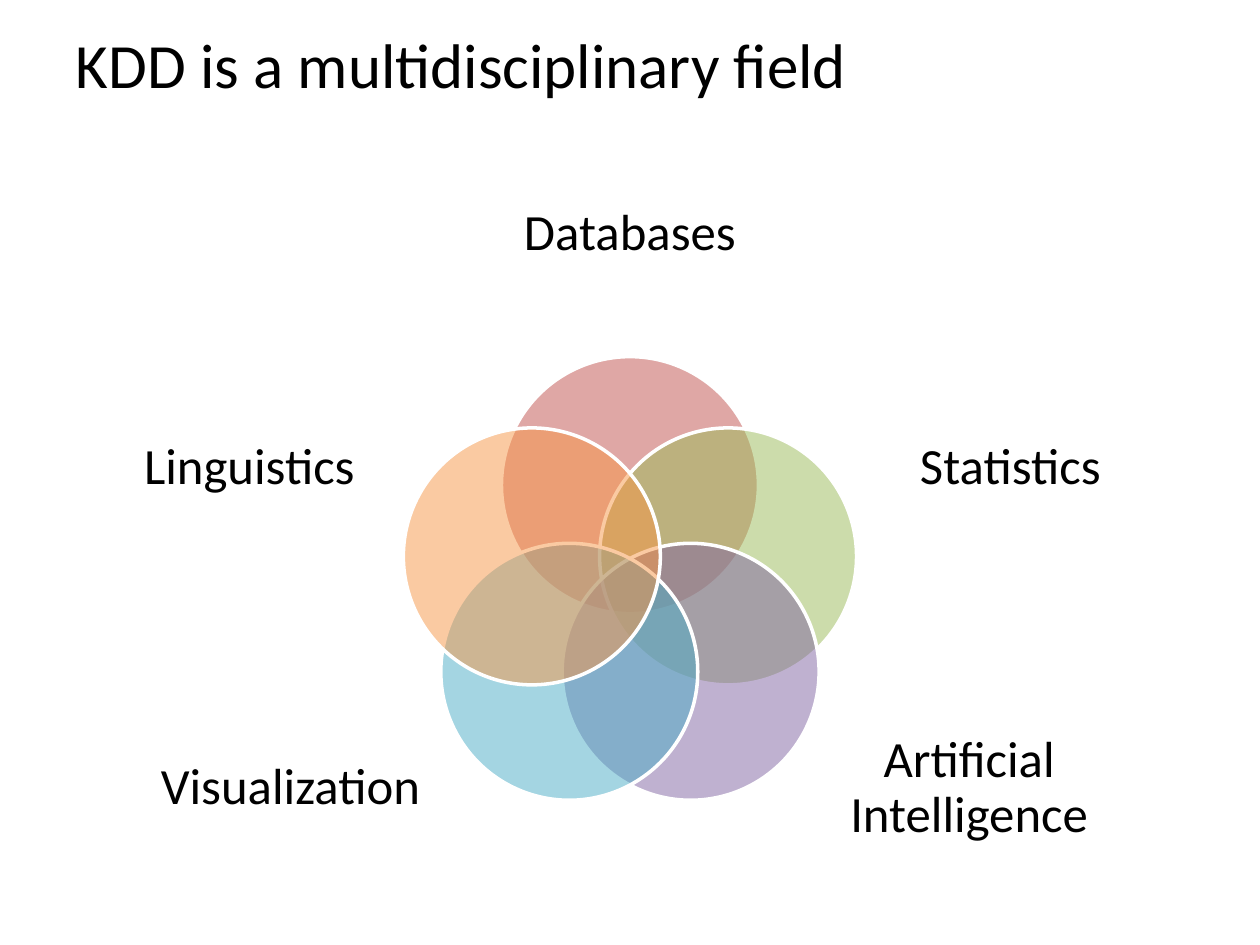
from math import cos, radians, sin

from lxml import etree
from pptx import Presentation
from pptx.dml.color import RGBColor
from pptx.enum.shapes import MSO_SHAPE
from pptx.enum.text import MSO_ANCHOR, PP_ALIGN
from pptx.oxml.ns import qn
from pptx.util import Cm, Pt

OVAL = MSO_SHAPE.OVAL
MIDDLE = MSO_ANCHOR.MIDDLE
CENTER, LEFT = PP_ALIGN.CENTER, PP_ALIGN.LEFT

BLACK = RGBColor(0x00, 0x00, 0x00)
WHITE = RGBColor(0xFF, 0xFF, 0xFF)
RED = RGBColor(0xC0, 0x50, 0x4D)
GREEN = RGBColor(0x9B, 0xBB, 0x59)
PURPLE = RGBColor(0x80, 0x64, 0xA2)
TEAL = RGBColor(0x4B, 0xAC, 0xC6)
ORANGE = RGBColor(0xF7, 0x96, 0x46)
FONT = "Calibri"

# Venn geometry in cm: centre, ring radius, circle size
MID_X, MID_Y = 12.7, 11.86
RING, SIZE = 2.08, 5.18

# Field, colour, label centre (x from the middle, y), label size
FIELDS = [
    ("Databases", RED, 0, 4.71, 6.02, 3.48),
    ("Statistics", GREEN, 7.67, 9.44, 5.38, 3.78),
    ("Artificial Intelligence", PURPLE, 6.84, 15.89, 5.38, 3.78),
    ("Visualization", TEAL, -6.84, 15.89, 5.38, 3.78),
    ("Linguistics", ORANGE, -7.67, 9.44, 5.38, 3.78),
]


def style(par, size, align):
    par.alignment = align
    par.font.name = FONT
    par.font.size = Pt(size)
    par.font.color.rgb = BLACK


prs = Presentation()
prs.slide_width, prs.slide_height = Cm(25.4), Cm(19.05)
slide = prs.slides.add_slide(prs.slide_layouts[5])

# Title
title = slide.shapes.title
title.left, title.top, title.width, title.height = Cm(1.27), Cm(0), Cm(22.86), Cm(2.54)
title.text_frame.text = "KDD is a multidisciplinary field"
title.text_frame.vertical_anchor = MIDDLE
style(title.text_frame.paragraphs[0], 36, LEFT)

# Venn diagram: circles evenly spaced on a ring, clockwise from the top
venn = slide.shapes.add_group_shape()
for i, (name, color, dx, y, wide, high) in enumerate(FIELDS):
    angle = radians(i * 360 / len(FIELDS))
    left = MID_X + RING * sin(angle) - SIZE / 2
    top = MID_Y - RING * cos(angle) - SIZE / 2
    disc = venn.shapes.add_shape(OVAL, Cm(left), Cm(top), Cm(SIZE), Cm(SIZE))
    disc.shadow.inherit = False
    disc.fill.solid()
    disc.fill.fore_color.rgb = color
    disc.line.color.rgb = WHITE
    disc.line.width = Pt(2)

    # Half transparent fill
    tint = disc.fill._xPr.find(qn("a:solidFill"))[0]
    etree.SubElement(tint, qn("a:alpha"), val="50000")

    # Label outside the circle
    label = venn.shapes.add_textbox(
        Cm(MID_X + dx - wide / 2), Cm(y - high / 2), Cm(wide), Cm(high))
    frame = label.text_frame
    frame.word_wrap = True
    frame.vertical_anchor = MIDDLE
    frame.margin_left = frame.margin_right = frame.margin_top = frame.margin_bottom = 0
    frame.text = name
    style(frame.paragraphs[0], 29, CENTER)
    frame.paragraphs[0].line_spacing = 0.9

prs.save("out.pptx")
